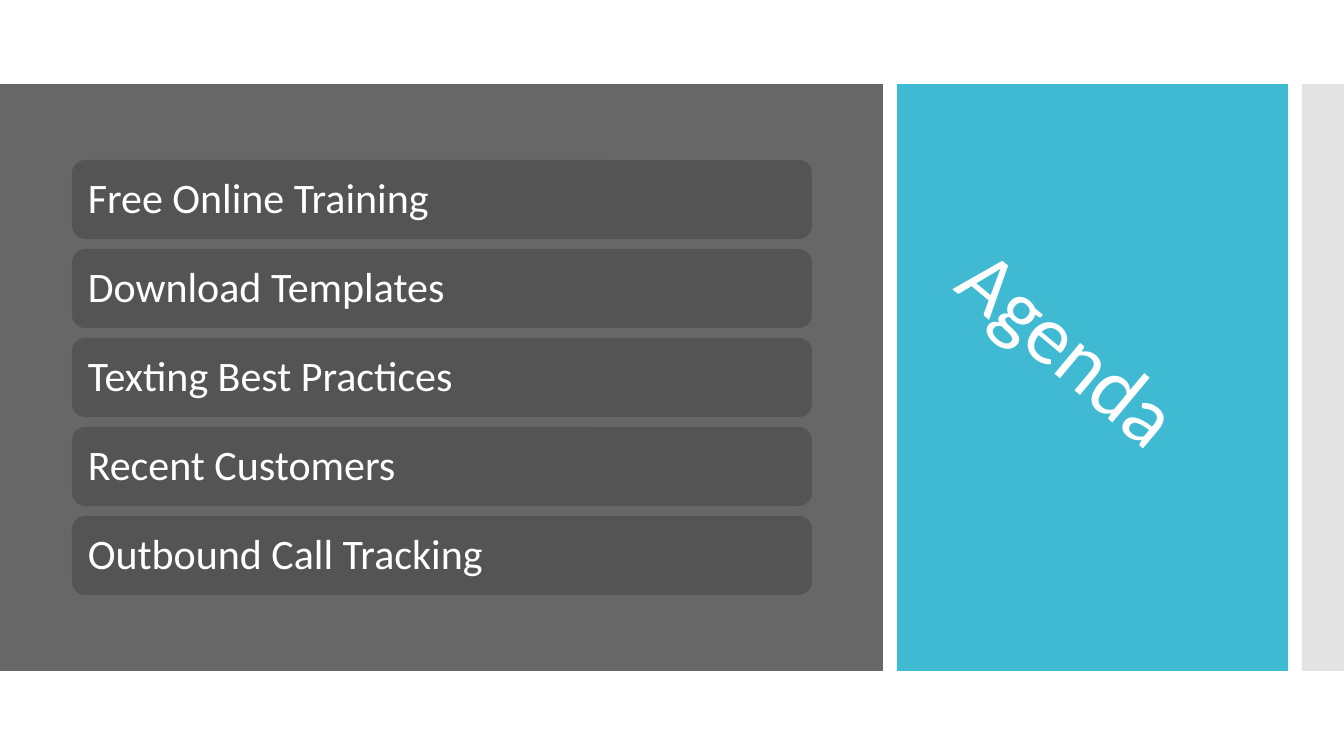
"""Build the agenda slide: five topic bars beside a tilted title."""
import pptx
import pptx.dml.color
import pptx.enum.shapes
import pptx.enum.text
import pptx.util

PX = 914400 / 100.8
COLORS = {
    "white": "FFFFFF",
    "topics": "676767",
    "bar": "545454",
    "accent": "40BAD2",
    "edge": "E3E3E3",
}
SHAPES = pptx.enum.shapes.MSO_SHAPE


def add_block(kind, color, *box):
    block = slide.shapes.add_shape(kind, *[round(v * PX) for v in box])
    block.shadow.inherit = False
    block.fill.solid()
    block.fill.fore_color.rgb = pptx.dml.color.RGBColor.from_string(COLORS[color])
    block.line.fill.background()
    return block


def write(holder, text, *, size, inset, color="white", spacing=0):
    frame = holder.text_frame
    frame.word_wrap = True
    frame.auto_size = pptx.enum.text.MSO_AUTO_SIZE.NONE
    frame.vertical_anchor = pptx.enum.text.MSO_ANCHOR.MIDDLE
    frame.margin_left = frame.margin_right = round(inset * PX)
    frame.margin_top = frame.margin_bottom = round(5 * PX)
    line = frame.paragraphs[0]
    line.alignment = pptx.enum.text.PP_ALIGN.LEFT
    line.line_spacing = 0.9
    run = line.add_run()
    run.text = text
    run.font.name = "Calibri"
    run.font.size = pptx.util.Pt(size)
    run.font.color.rgb = pptx.dml.color.RGBColor.from_string(COLORS[color])
    if spacing:
        run.font._element.set("spc", str(spacing))


deck = pptx.Presentation()
deck.slide_width = round(1344 * PX)
deck.slide_height = round(756 * PX)
slide = deck.slides.add_slide(deck.slide_layouts[5])
slide.background.fill.solid()
slide.background.fill.fore_color.rgb = pptx.dml.color.RGBColor.from_string(COLORS["white"])

for color, left, width in [("topics", 0, 883), ("accent", 897, 391), ("edge", 1302, 42)]:
    add_block(SHAPES.RECTANGLE, color, left, 84, width, 587)

topics = [
    "Free Online Training",
    "Download Templates",
    "Texting Best Practices",
    "Recent Customers",
    "Outbound Call Tracking",
]
for row, topic in enumerate(topics):
    bar = add_block(SHAPES.ROUNDED_RECTANGLE, "bar", 72, 160 + 89 * row, 740, 79)
    write(bar, topic, size=30, inset=12)

title = slide.shapes.title
title.left, title.top, title.width, title.height = [round(v * PX) for v in (925, 320, 325, 93)]
title.rotation = 39.8
write(title, "Agenda", size=60, inset=10, spacing=-60)
slide.shapes._spTree.append(title._element)

deck.save("out.pptx")
